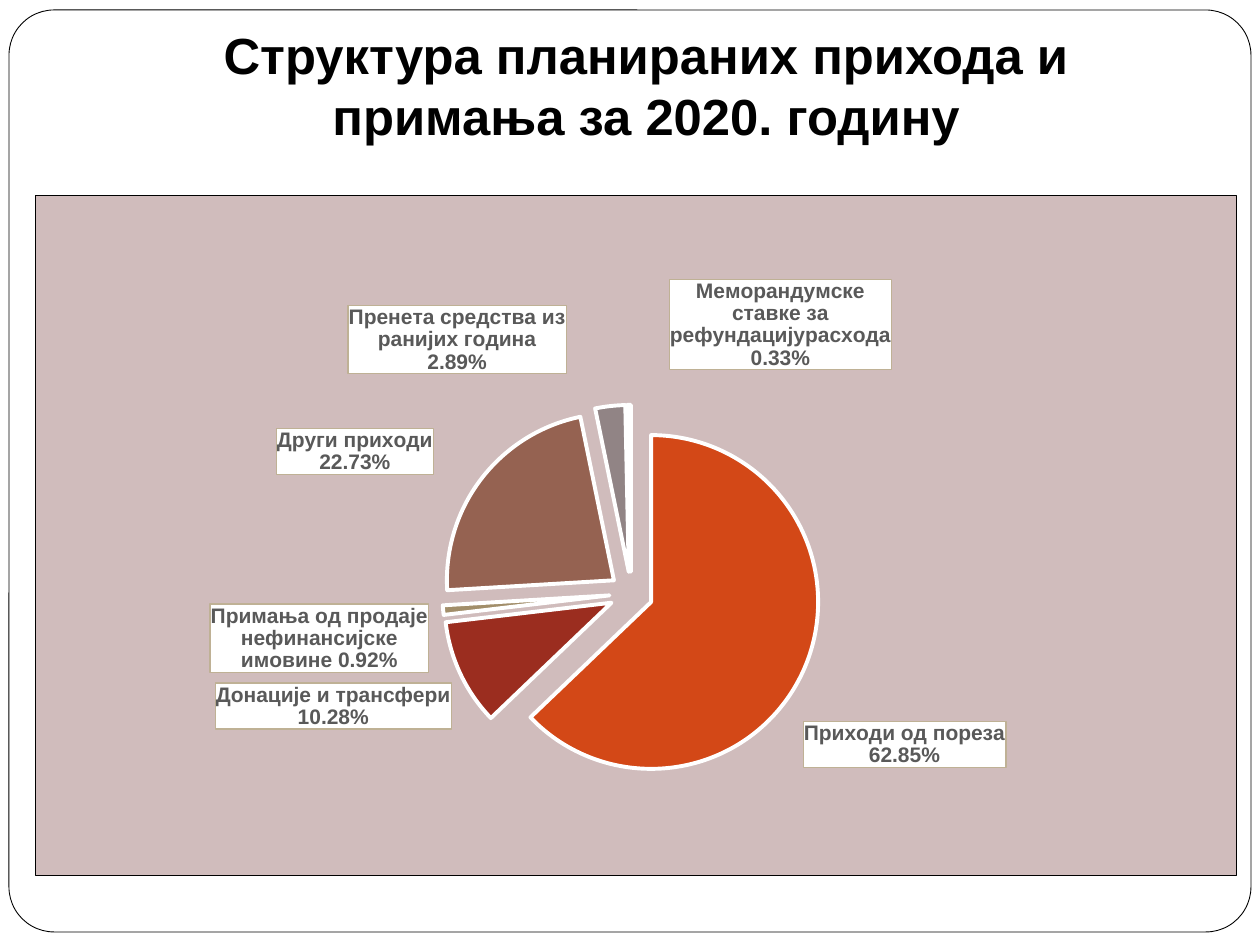
from dataclasses import dataclass

from lxml.etree import _Element as Element
from pptx import Presentation
from pptx.chart.data import CategoryChartData
from pptx.dml.color import RGBColor
from pptx.enum.chart import XL_CHART_TYPE as ChartType
from pptx.enum.shapes import MSO_SHAPE as Preset
from pptx.enum.text import MSO_ANCHOR as Anchor, MSO_AUTO_SIZE as AutoSize, PP_ALIGN as Align
from pptx.oxml import parse_xml
from pptx.oxml.ns import nsdecls, qn
from pptx.util import Emu, Pt

EMU_PER_PX = 914400 / 126


@dataclass(frozen=True)
class Theme:
    paper: str = "FFFFFF"
    ink: str = "000000"
    chart_fill: str = "D0BCBC"
    label_text: str = "595959"
    label_border: str = "BFB195"
    heading_font: str = "Arial"
    chart_font: str = "Times New Roman"
    title_size: float = 29
    chart_size: float = 10
    label_size: float = 12
    hairline: float = 0.5
    chart_line: float = 0.75
    slice_line: float = 2.25


@dataclass(frozen=True)
class Box:
    left: int
    top: int
    width: int
    height: int

    def emu(self) -> tuple[Emu, ...]:
        return tuple(px(n) for n in (self.left, self.top, self.width, self.height))


@dataclass(frozen=True)
class Slice:
    name: str
    percent: float
    color: str
    shift_x: int  # label shift from the outside end of its slice, in px
    shift_y: int
    separator: str = "\n"


THEME = Theme()
FRAME = Box(9, 10, 1242, 922)
TITLE = Box(95, 0, 1103, 158)
CHART = Box(35, 195, 1202, 681)
PLOT = Box(219, 210, 755, 378)  # relative to the chart
EXPLOSION = 13
SLICES = (
    Slice("Приходи од пореза", 62.85, "D34817", -8, 51),
    Slice("Донације и трансфери", 10.28, "9B2D1F", -2, 6),
    Slice("Примања од продаје нефинансијске имовине", 0.92, "A28E6A", -7, -7, " "),
    Slice("Други приходи", 22.73, "956251", -42, 0),
    Slice("Пренета средства из ранијих година", 2.89, "918485", -43, -25),
    Slice("Меморандумске ставке за рефундацијурасхода", 0.33, "855D5D", 152, -28),
)


def px(length: int) -> Emu:
    return Emu(round(length * EMU_PER_PX))


def rgb(color: str) -> RGBColor:
    return RGBColor.from_string(color)


def area_xml(fill: str, line: str, width: float) -> str:
    return (f'<c:spPr {nsdecls("c", "a")}>'
            f'<a:solidFill><a:srgbClr val="{fill}"/></a:solidFill>'
            f'<a:ln w="{Pt(width)}"><a:solidFill><a:srgbClr val="{line}"/></a:solidFill></a:ln>'
            '</c:spPr>')


def label_body(separator: str) -> str:
    """Format and content shared by the single labels and their default."""
    return (f'<c:numFmt formatCode="0.00%" sourceLinked="0"/>'
            f'{area_xml(THEME.paper, THEME.label_border, THEME.chart_line)}'
            '<c:txPr><a:bodyPr/><a:lstStyle/><a:p><a:pPr>'
            f'<a:defRPr sz="{int(THEME.label_size * 100)}" b="1">'
            f'<a:solidFill><a:srgbClr val="{THEME.label_text}"/></a:solidFill>'
            f'<a:latin typeface="{THEME.heading_font}"/><a:cs typeface="{THEME.heading_font}"/>'
            '</a:defRPr></a:pPr><a:endParaRPr lang="sr-Cyrl-RS"/></a:p></c:txPr>'
            '<c:dLblPos val="outEnd"/><c:showLegendKey val="0"/><c:showVal val="0"/>'
            '<c:showCatName val="1"/><c:showSerName val="0"/><c:showPercent val="1"/>'
            f'<c:showBubbleSize val="0"/><c:separator>{separator}</c:separator>')


def labels_element(slices: tuple[Slice, ...]) -> Element:
    single = "".join(
        f'<c:dLbl><c:idx val="{index}"/><c:layout><c:manualLayout>'
        f'<c:x val="{part.shift_x / CHART.width:.3f}"/><c:y val="{part.shift_y / CHART.height:.3f}"/>'
        f'</c:manualLayout></c:layout>{label_body(part.separator)}</c:dLbl>'
        for index, part in enumerate(slices))
    return parse_xml(f'<c:dLbls {nsdecls("c", "a")}>{single}{label_body(chr(10))}'
                     '<c:showLeaderLines val="0"/></c:dLbls>')


def plot_layout() -> Element:
    shares = {"x": PLOT.left / CHART.width, "y": PLOT.top / CHART.height,
              "w": PLOT.width / CHART.width, "h": PLOT.height / CHART.height}
    values = "".join(f'<c:{key} val="{share:.3f}"/>' for key, share in shares.items())
    return parse_xml(f'<c:layout {nsdecls("c")}><c:manualLayout><c:layoutTarget val="inner"/>'
                     f'<c:xMode val="edge"/><c:yMode val="edge"/>{values}'
                     '</c:manualLayout></c:layout>')


def draw_frame(slide) -> None:
    frame = slide.shapes.add_shape(Preset.ROUNDED_RECTANGLE, *FRAME.emu())
    frame.adjustments[0] = 0.049
    frame.shadow.inherit = False
    frame.fill.solid()
    frame.fill.fore_color.rgb = rgb(THEME.paper)
    frame.line.color.rgb = rgb(THEME.ink)
    frame.line.width = Pt(THEME.hairline)
    frame._element.getparent().insert(2, frame._element)  # behind the title


def draw_title(slide, text: str) -> None:
    title = slide.shapes.title
    title.left, title.top, title.width, title.height = TITLE.emu()
    text_frame = title.text_frame
    text_frame.auto_size = AutoSize.NONE
    text_frame.word_wrap = True
    text_frame.vertical_anchor = Anchor.BOTTOM
    text_frame.margin_bottom = Pt(7.2)
    paragraph = text_frame.paragraphs[0]
    paragraph.alignment = Align.CENTER
    run = paragraph.add_run()
    run.text = text
    run.font.name = THEME.heading_font
    run.font.size = Pt(THEME.title_size)
    run.font.bold = True
    run.font.color.rgb = rgb(THEME.ink)


def draw_pie(slide, slices: tuple[Slice, ...]) -> None:
    data = CategoryChartData()
    data.categories = [part.name for part in slices]
    data.add_series("Series 1", [part.percent for part in slices])
    chart = slide.shapes.add_chart(ChartType.PIE, *CHART.emu(), data).chart
    chart.has_legend = False
    chart.has_title = False
    chart.font.name = THEME.chart_font
    chart.font.size = Pt(THEME.chart_size)
    chart.font.color.rgb = rgb(THEME.ink)
    chart.plots[0].vary_by_categories = True

    # Slices
    series = chart.plots[0].series[0]
    for index, part in enumerate(slices):
        style = series.points[index].format
        style.fill.solid()
        style.fill.fore_color.rgb = rgb(part.color)
        style.line.color.rgb = rgb(THEME.paper)
        style.line.width = Pt(THEME.slice_line)
    first_point = series._element.find(qn("c:dPt"))
    first_point.addprevious(parse_xml(f'<c:explosion {nsdecls("c")} val="{EXPLOSION}"/>'))
    for point in series._element.findall(qn("c:dPt")):
        point.find(qn("c:spPr")).addprevious(
            parse_xml(f'<c:explosion {nsdecls("c")} val="{EXPLOSION}"/>'))

    # Labels, plot position and chart background
    series._element.find(qn("c:cat")).addprevious(labels_element(slices))
    chart_space = chart._chartSpace
    plot_area = chart_space.find(qn("c:chart")).find(qn("c:plotArea"))
    for layout in plot_area.findall(qn("c:layout")):
        plot_area.remove(layout)
    plot_area.insert(0, plot_layout())
    chart_space.find(qn("c:chart")).addnext(
        parse_xml(area_xml(THEME.chart_fill, THEME.ink, THEME.chart_line)))


def main() -> None:
    presentation = Presentation()
    presentation.slide_width, presentation.slide_height = px(1260), px(945)
    slide = presentation.slides.add_slide(presentation.slide_layouts[5])
    draw_frame(slide)
    draw_title(slide, "Структура планираних прихода и примања за 2020. годину")
    draw_pie(slide, SLICES)
    presentation.save("out.pptx")


if __name__ == "__main__":
    main()
